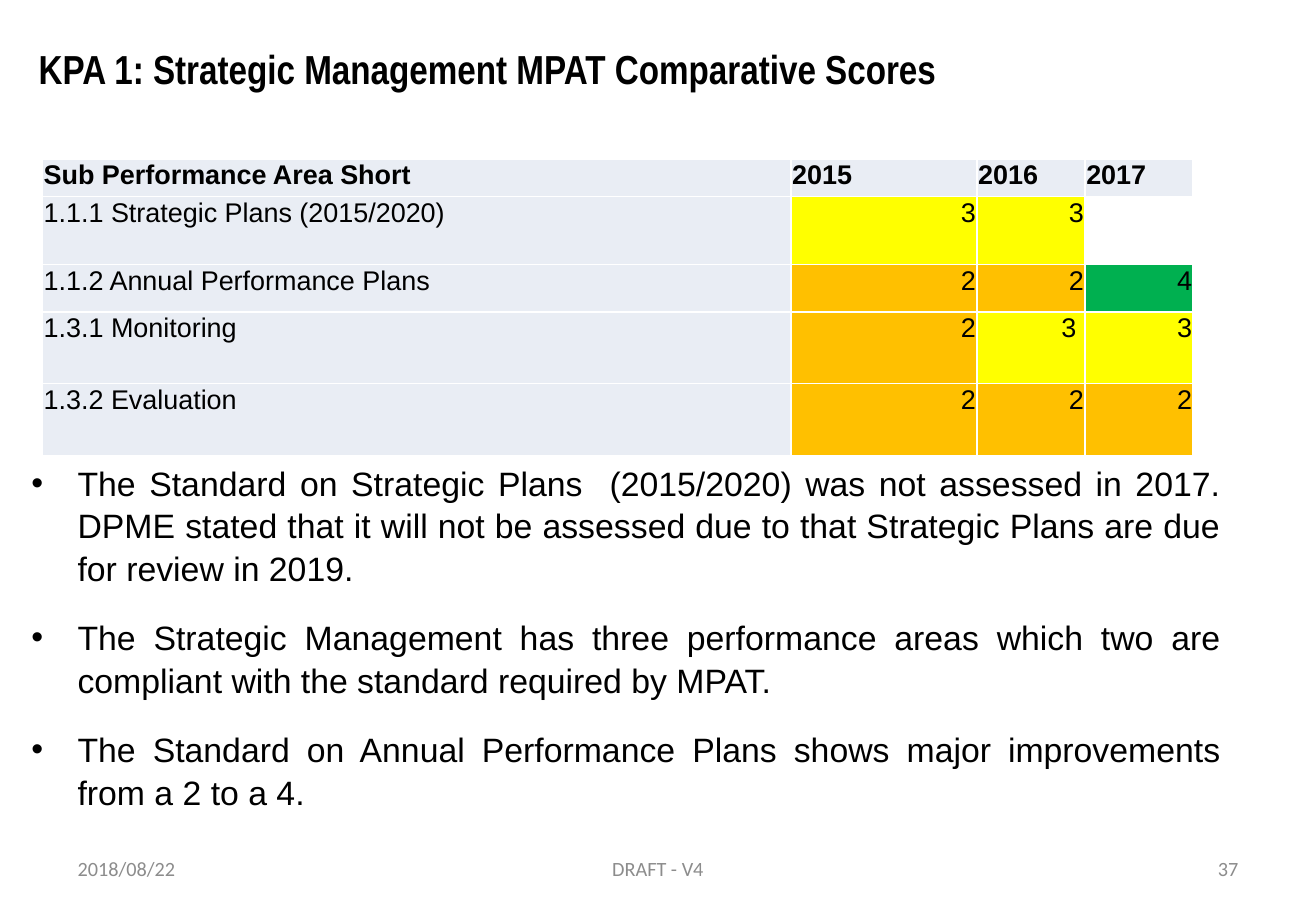
"""Build the KPA 1 comparative scores slide."""
from lxml.etree import SubElement
from pptx import Presentation
from pptx.dml.color import RGBColor
from pptx.enum.text import MSO_ANCHOR as Anchor, PP_ALIGN as Align
from pptx.oxml.ns import qn
from pptx.util import Inches, Pt

COLORS = {
    "text": "000000",
    "footer": "8C8C8C",
    "label": "E9EDF4",
    "border": "FFFFFF",
    "2": "FFC000",
    "3": "FFFF00",
    "4": "00B050",
}
SCORES = [
    ("Sub Performance Area Short", "2015", "2016", "2017"),
    ("1.1.1 Strategic Plans (2015/2020)", "3", "3", ""),
    ("1.1.2 Annual Performance Plans", "2", "2", "4"),
    ("1.3.1 Monitoring", "2", "3 ", "3"),
    ("1.3.2 Evaluation", "2", "2", "2"),
]
COLUMN_WIDTHS = (6.16, 1.53, 0.89, 0.89)
ROW_HEIGHTS = (0.31, 0.56, 0.39, 0.59, 0.59)
FINDINGS = [
    "The Standard on Strategic Plans  (2015/2020) was not assessed in 2017. "
    "DPME stated that it will not be assessed due to that Strategic Plans "
    "are due for review in 2019.",
    "The Strategic Management has three performance areas which two are "
    "compliant with the standard required by MPAT.",
    "The Standard on Annual Performance Plans shows major improvements "
    "from a 2 to a 4.",
]
FOOTERS = [
    ("2018/08/22", 0.54, 2.53, Align.LEFT),
    ("DRAFT - V4", 3.7, 3.43, Align.CENTER),
    ("37", 7.76, 2.53, Align.RIGHT),
]


def rgb(name):
    """Return the named colour."""
    return RGBColor.from_string(COLORS[name])


def add_run(paragraph, text, size, font="Arial", color="text", bold=False):
    """Append one formatted run."""
    run = paragraph.add_run()
    run.text = text
    run.font.name = font
    run.font.size = Pt(size)
    run.font.bold = bold
    run.font.color.rgb = rgb(color)


def add_frame(slide, left, top, width, height, anchor=Anchor.TOP):
    """Add a wrapping text box and return its text frame."""
    box = slide.shapes.add_textbox(
        Inches(left), Inches(top), Inches(width), Inches(height))
    frame = box.text_frame
    frame.word_wrap = True
    frame.vertical_anchor = anchor
    return frame


def add_title(slide, text):
    """Add the slide heading."""
    heading = add_frame(slide, 0.22, 0.18, 9.24, 0.69, Anchor.MIDDLE).paragraphs[0]
    heading.line_spacing = 1.2
    heading.space_before = Pt(5.8)
    add_run(heading, text, 24, "Arial Narrow", bold=True)


def add_borders(cell):
    """Draw thin borders on all four sides of a cell."""
    properties = cell._tc.get_or_add_tcPr()
    for side in ("lnL", "lnR", "lnT", "lnB"):
        line = SubElement(properties, qn(f"a:{side}"), w=str(Pt(1)))
        fill = SubElement(line, qn("a:solidFill"))
        SubElement(fill, qn("a:srgbClr"), val=COLORS["border"])


def fill_cell(cell, text, is_header, is_score):
    """Write and colour one table cell."""
    cell.margin_left = cell.margin_right = cell.margin_top = Inches(0.01)
    cell.margin_bottom = 0
    add_borders(cell)
    if not text:
        cell.fill.background()
        return
    cell.fill.solid()
    cell.fill.fore_color.rgb = rgb(text.strip() if is_score else "label")
    paragraph = cell.text_frame.paragraphs[0]
    paragraph.alignment = Align.RIGHT if is_score else Align.LEFT
    add_run(paragraph, text, 16, bold=is_header)


def add_score_table(slide):
    """Add the table of yearly scores."""
    table = slide.shapes.add_table(
        len(SCORES), len(COLUMN_WIDTHS), Inches(0.35), Inches(1.31),
        Inches(sum(COLUMN_WIDTHS)), Inches(sum(ROW_HEIGHTS))).table
    table.horz_banding = False
    table.first_row = False
    for column, width in zip(table.columns, COLUMN_WIDTHS):
        column.width = Inches(width)
    for r, (height, entries) in enumerate(zip(ROW_HEIGHTS, SCORES)):
        table.rows[r].height = Inches(height)
        for c, text in enumerate(entries):
            fill_cell(table.cell(r, c), text, r == 0, r > 0 and c > 0)


def add_findings(slide):
    """Add the bulleted findings."""
    frame = add_frame(slide, 0.16, 3.74, 9.99, 4.03)
    for i, text in enumerate(FINDINGS):
        finding = frame.add_paragraph() if i else frame.paragraphs[0]
        finding.alignment = Align.JUSTIFY
        finding.line_spacing = 1.05
        finding.space_before = Pt(6)
        finding.space_after = Pt(10)
        properties = finding._p.get_or_add_pPr()
        properties.set("marL", str(Inches(0.38)))
        properties.set("indent", str(-Inches(0.38)))
        SubElement(properties, qn("a:buFont"), typeface="Arial")
        SubElement(properties, qn("a:buChar"), char="•")
        add_run(finding, text, 20)


def add_footer(slide, text, left, width, alignment):
    """Add one footer entry."""
    entry = add_frame(slide, left, 6.95, width, 0.4, Anchor.MIDDLE).paragraphs[0]
    entry.alignment = alignment
    add_run(entry, text, 12, "Calibri", "footer")


def main():
    """Build and save the slide."""
    deck = Presentation()
    deck.slide_width = Inches(10.83)
    deck.slide_height = Inches(7.5)
    slide = deck.slides.add_slide(deck.slide_layouts[6])
    add_title(slide, "KPA 1: Strategic Management MPAT Comparative Scores")
    add_findings(slide)
    add_score_table(slide)
    for footer in FOOTERS:
        add_footer(slide, *footer)
    deck.save("out.pptx")


if __name__ == "__main__":
    main()
